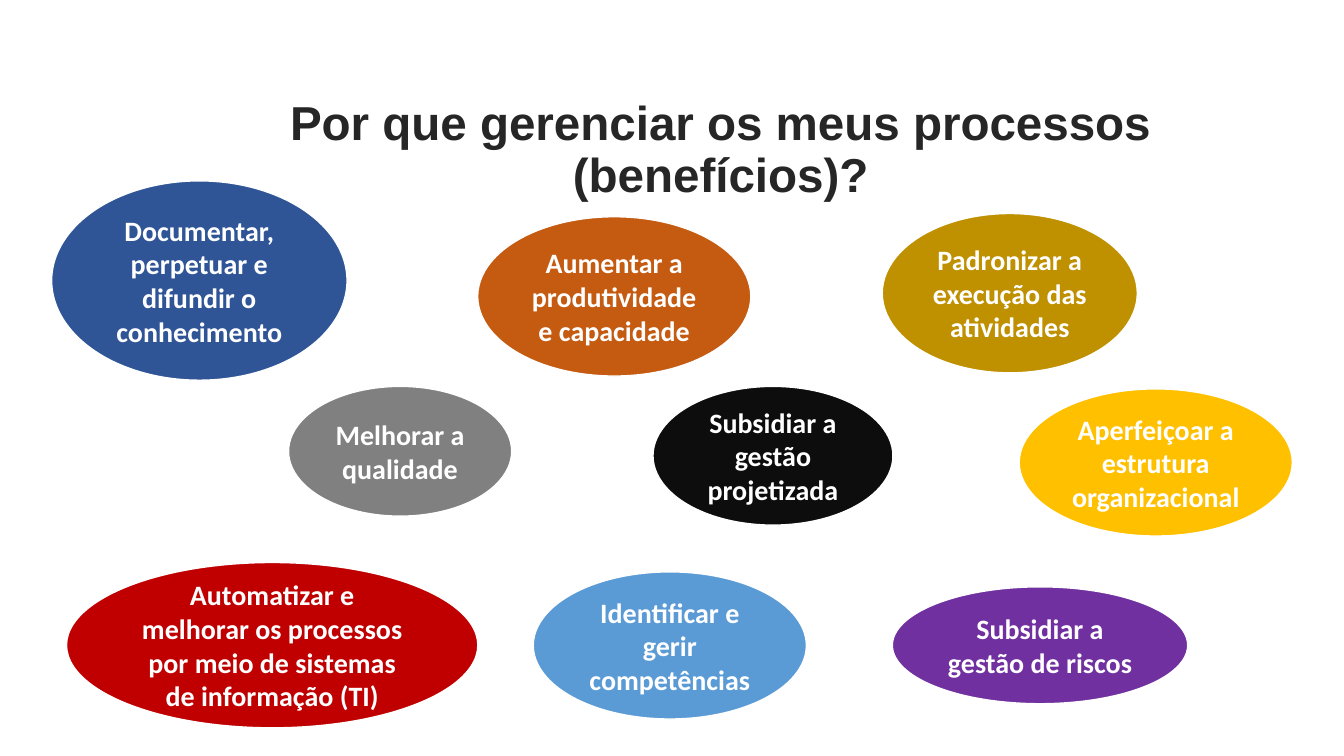
from dataclasses import dataclass

from pptx import Presentation
from pptx import util as u
from pptx.dml.color import RGBColor
from pptx.enum import shapes, text


@dataclass(frozen=True)
class Theme:
    white: str = "FFFFFF"
    ink: str = "262626"
    blue: str = "2F5597"
    gold: str = "BF9000"
    rust: str = "C55A11"
    gray: str = "808080"
    plum: str = "7030A0"
    amber: str = "FFC000"
    red: str = "C00000"
    sky: str = "5B9BD5"
    black: str = "0D0D0D"
    head_font: str = "Arial"
    body_font: str = "Calibri"
    head_size: float = 34
    body_size: float = 20
    head_line: float = 0.75
    body_line: float = 1


THEME = Theme()
SHAPE = shapes.MSO_SHAPE
ANCHOR = text.MSO_ANCHOR

TITLE = "Por que gerenciar os meus processos (benefícios)?"
TITLE_BOX = (126.7, 67.7, 776.2, 45.4)

# Each benefit: wording, fill, (left, top, width, height) in points
GAINS = [
    ("Documentar, perpetuar e difundir o conhecimento",
     THEME.blue, (36.9, 129.2, 211, 142.4)),
    ("Padronizar a execução das atividades",
     THEME.gold, (630.2, 152.5, 182.2, 113.8)),
    ("Aumentar a produtividade e capacidade",
     THEME.rust, (341.2, 154.8, 195.1, 113.8)),
    ("Melhorar a qualidade",
     THEME.gray, (206.1, 276, 159.4, 92.7)),
    ("Subsidiar a gestão de riscos",
     THEME.plum, (637.4, 419.2, 211, 83.5)),
    ("Aperfeiçoar a estrutura organizacional",
     THEME.amber, (728, 277.8, 195.1, 105.1)),
    ("Automatizar e melhorar os processos por meio de sistemas "
     "de informação (TI)",
     THEME.red, (47.5, 401.8, 293.8, 118.1)),
    ("Identificar e gerir competências",
     THEME.sky, (380.9, 408.5, 195.1, 105.1)),
    ("Subsidiar a gestão projetizada",
     THEME.black, (466.4, 276, 171.4, 99.1)),
]


def add_shape(slide, kind, box, fill, line, anchor):
    """Draw a filled shape with a white edge and return it."""
    shape = slide.shapes.add_shape(kind, *(u.Pt(n) for n in box))
    shape.shadow.inherit = False
    shape.fill.solid()
    shape.fill.fore_color.rgb = RGBColor.from_string(fill)
    shape.line.color.rgb = RGBColor.from_string(THEME.white)
    shape.line.width = u.Pt(line)
    shape.text_frame.word_wrap = True
    shape.text_frame.vertical_anchor = anchor
    return shape


def add_words(shape, words, face, size, color):
    """Write one bold, centred paragraph and return it."""
    para = shape.text_frame.paragraphs[0]
    para.alignment = text.PP_ALIGN.CENTER
    run = para.add_run()
    run.text = words
    run.font.name = face
    run.font.size = u.Pt(size)
    run.font.bold = True
    run.font.color.rgb = RGBColor.from_string(color)
    return para


def add_title(slide, box):
    shape = add_shape(slide, SHAPE.RECTANGLE, box, THEME.white,
                      THEME.head_line, ANCHOR.TOP)
    para = add_words(shape, TITLE, THEME.head_font, THEME.head_size, THEME.ink)
    para.line_spacing = 0.9


def add_gain(slide, words, fill, box):
    """Draw one benefit as a coloured ellipse."""
    shape = add_shape(slide, SHAPE.OVAL, box, fill,
                      THEME.body_line, ANCHOR.MIDDLE)
    add_words(shape, words, THEME.body_font, THEME.body_size, THEME.white)


def main():
    deck = Presentation()
    deck.slide_width, deck.slide_height = u.Pt(960), u.Pt(540)
    slide = deck.slides.add_slide(deck.slide_layouts[6])
    add_title(slide, TITLE_BOX)
    for words, fill, box in GAINS:
        add_gain(slide, words, fill, box)
    deck.save("out.pptx")


if __name__ == "__main__":
    main()
